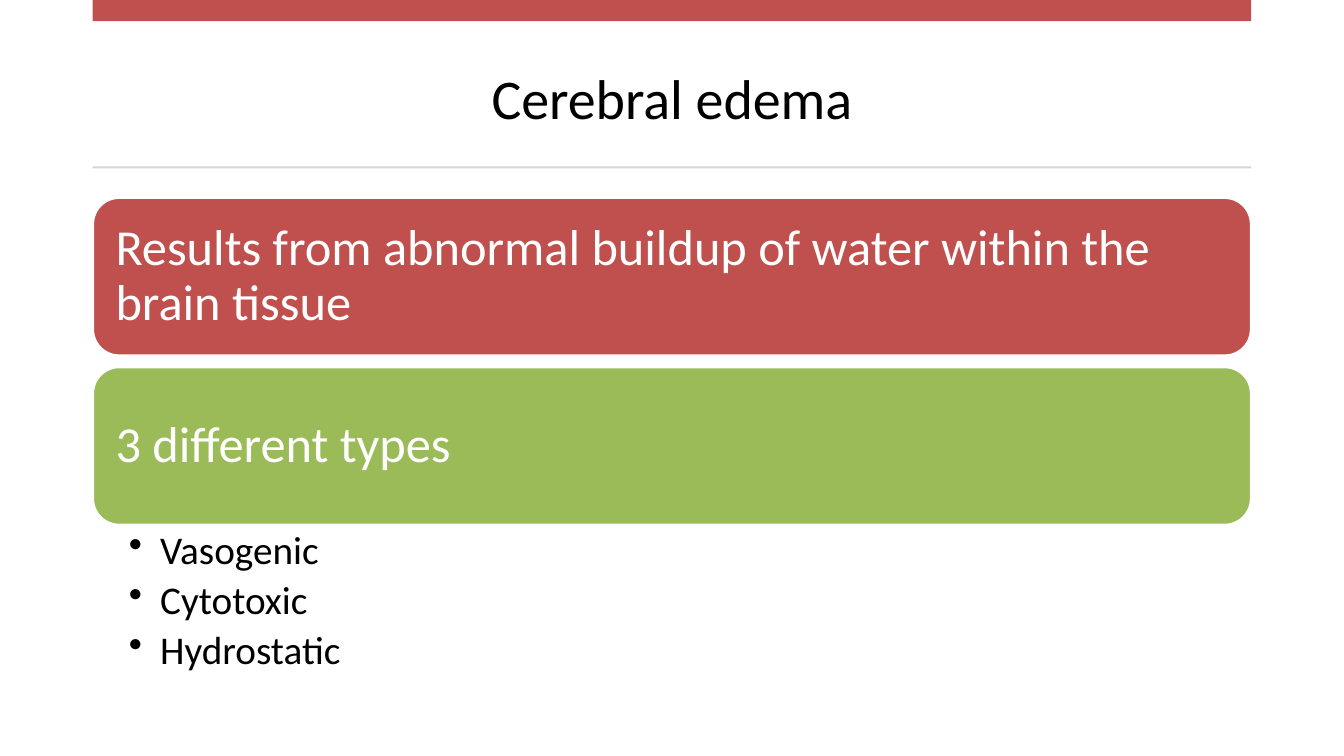
from dataclasses import dataclass

from lxml import etree
from pptx import Presentation
from pptx.dml.color import RGBColor
from pptx.enum.shapes import MSO_SHAPE
from pptx.enum.text import MSO_ANCHOR, PP_ALIGN
from pptx.oxml.ns import qn
from pptx.shapes.autoshape import Shape
from pptx.slide import Slide
from pptx.text.text import TextFrame, _Paragraph
from pptx.util import Inches, Pt

RECTANGLE = MSO_SHAPE.RECTANGLE
ROUNDED = MSO_SHAPE.ROUNDED_RECTANGLE
MIDDLE, TOP = MSO_ANCHOR.MIDDLE, MSO_ANCHOR.TOP
CENTER, LEFT = PP_ALIGN.CENTER, PP_ALIGN.LEFT

SLIDE_WIDTH, SLIDE_HEIGHT = Inches(13.33), Inches(7.5)

# Shares of the slide's size, in percent
COLUMN_LEFT, COLUMN_WIDTH = 6.9, 86.2
CARD_TOP, CARD_HEIGHT, CARD_PITCH = 26.13, 20.93, 22.4


@dataclass(frozen=True)
class Theme:
    font: str = "Calibri"
    red: str = "C0504D"
    green: str = "9BBB59"
    rule: str = "D5D5D5"
    dark: str = "000000"
    light: str = "FFFFFF"
    title_size: int = 40
    card_size: int = 36
    bullet_size: int = 28
    card_outline: int = 2
    line_spacing: float = 0.9
    bullet_gap: float = 5.6


@dataclass(frozen=True)
class Band:
    """A full-column strip, placed by percent of the slide's height."""
    top: float
    height: float

    def box(self) -> tuple[int, int, int, int]:
        return (int(SLIDE_WIDTH * COLUMN_LEFT / 100),
                int(SLIDE_HEIGHT * self.top / 100),
                int(SLIDE_WIDTH * COLUMN_WIDTH / 100),
                int(SLIDE_HEIGHT * self.height / 100))


@dataclass(frozen=True)
class Card:
    statement: str
    color: str


THEME = Theme()
TITLE_BAND = Band(4.93, 15.73)
ACCENT_BAND = Band(0, 2.8)
RULE_BAND = Band(22, 0.27)
TYPES_BAND = Band(69.47, 21.2)
CARDS = [
    Card("Results from abnormal buildup of water within the brain tissue", THEME.red),
    Card("3 different types", THEME.green),
]
EDEMA_TYPES = ["Vasogenic", "Cytotoxic", "Hydrostatic"]


def set_frame(frame: TextFrame, anchor: MSO_ANCHOR, left: float,
              right: float, vertical: float) -> None:
    frame.word_wrap = True
    frame.vertical_anchor = anchor
    frame.margin_left, frame.margin_right = Inches(left), Inches(right)
    frame.margin_top = frame.margin_bottom = Inches(vertical)


def write(paragraph: _Paragraph, text: str, size: int, color: str,
          align: PP_ALIGN = LEFT) -> None:
    paragraph.alignment = align
    run = paragraph.add_run()
    run.text = text
    run.font.name = THEME.font
    run.font.size = Pt(size)
    run.font.color.rgb = RGBColor.from_string(color)


def add_bullet(paragraph: _Paragraph) -> None:
    properties = paragraph._p.get_or_add_pPr()
    properties.set("marL", str(Inches(0.31)))
    properties.set("indent", str(Inches(-0.31)))
    etree.SubElement(properties, qn("a:buChar")).set("char", "•")


def draw_band(slide: Slide, band: Band, color: str,
              outline: MSO_SHAPE = RECTANGLE) -> Shape:
    strip = slide.shapes.add_shape(outline, *band.box())
    strip.shadow.inherit = False
    strip.fill.solid()
    strip.fill.fore_color.rgb = RGBColor.from_string(color)
    strip.line.fill.background()
    return strip


def draw_title(slide: Slide) -> None:
    frame = slide.shapes.add_textbox(*TITLE_BAND.box()).text_frame
    set_frame(frame, MIDDLE, 0.1, 0.1, 0.05)
    write(frame.paragraphs[0], "Cerebral edema", THEME.title_size, THEME.dark, CENTER)


def draw_card(slide: Slide, card: Card, band: Band) -> None:
    panel = draw_band(slide, band, card.color, ROUNDED)
    panel.line.color.rgb = RGBColor.from_string(THEME.light)
    panel.line.width = Pt(THEME.card_outline)
    set_frame(panel.text_frame, MIDDLE, 0.15, 0.15, 0.15)
    statement = panel.text_frame.paragraphs[0]
    statement.line_spacing = THEME.line_spacing
    write(statement, card.statement, THEME.card_size, THEME.light)


def draw_types(slide: Slide) -> None:
    frame = slide.shapes.add_textbox(*TYPES_BAND.box()).text_frame
    set_frame(frame, TOP, 0.36, 0.28, 0.05)
    for index, edema_type in enumerate(EDEMA_TYPES):
        entry = frame.add_paragraph() if index else frame.paragraphs[0]
        entry.level = 1
        entry.line_spacing = THEME.line_spacing
        entry.space_after = Pt(THEME.bullet_gap)
        add_bullet(entry)
        write(entry, edema_type, THEME.bullet_size, THEME.dark)


def main() -> None:
    deck = Presentation()
    deck.slide_width, deck.slide_height = SLIDE_WIDTH, SLIDE_HEIGHT
    slide = deck.slides.add_slide(deck.slide_layouts[6])

    # Heading
    draw_title(slide)
    draw_band(slide, ACCENT_BAND, THEME.red)
    draw_band(slide, RULE_BAND, THEME.rule)

    # Statement cards and the list of types
    for row, card in enumerate(CARDS):
        draw_card(slide, card, Band(CARD_TOP + row * CARD_PITCH, CARD_HEIGHT))
    draw_types(slide)

    deck.save("out.pptx")


if __name__ == "__main__":
    main()
